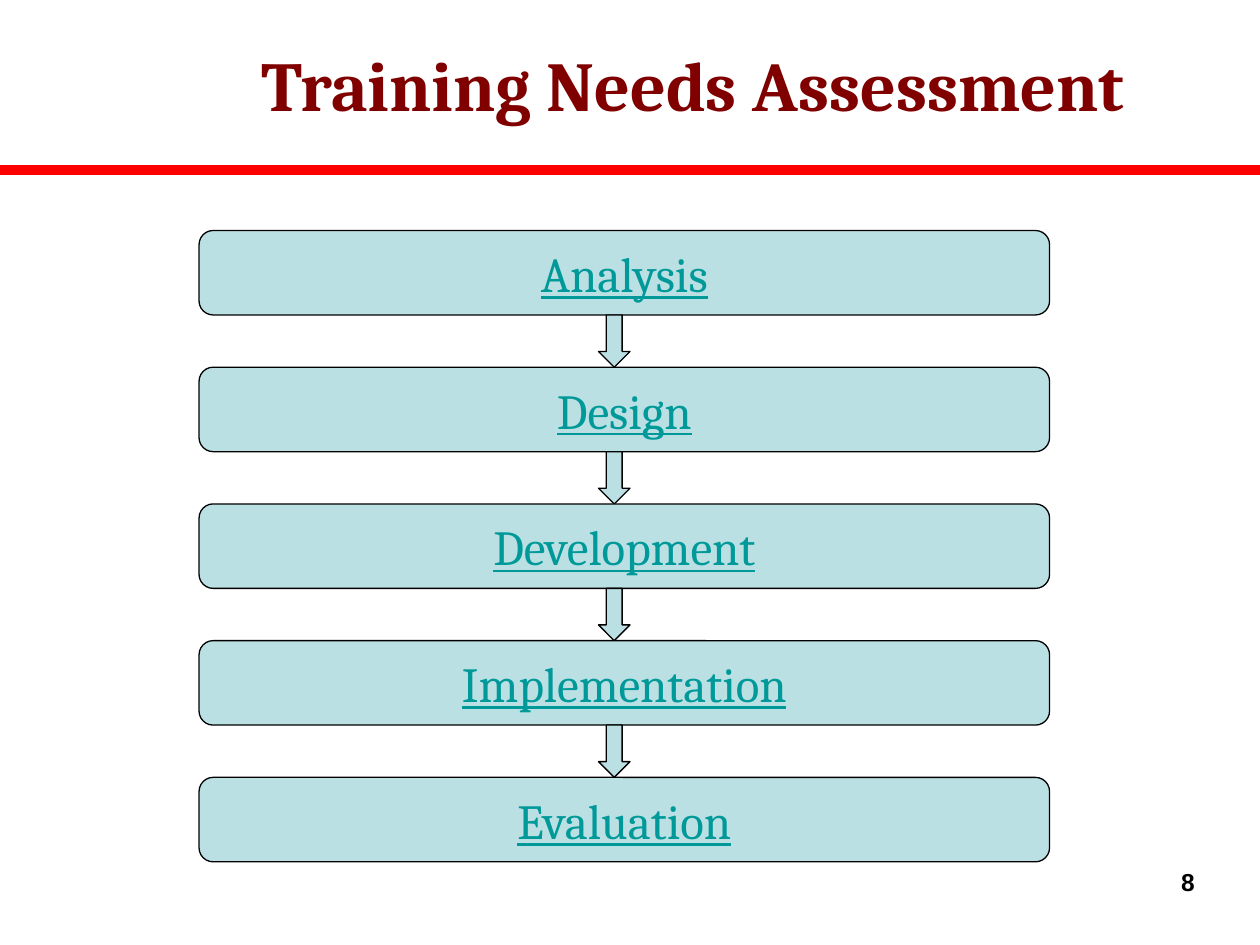
from dataclasses import dataclass

from lxml.etree import SubElement
from pptx import Presentation
from pptx.dml.color import RGBColor as RGB
from pptx.enum.shapes import MSO_CONNECTOR as Connector, MSO_SHAPE as Shape
from pptx.enum.text import MSO_ANCHOR as Anchor, PP_ALIGN as Align
from pptx.oxml.ns import qn
from pptx.util import Inches, Pt

# Content
TITLE = "Training Needs Assessment"
STAGES = ["Analysis", "Design", "Development", "Implementation", "Evaluation"]
PAGE_NUMBER = "8"


@dataclass(frozen=True)
class Theme:
    heading_font: str = "Cambria"
    number_font: str = "Arial"
    title_size: int = 40
    stage_size: int = 28
    number_size: int = 14
    title: RGB = RGB(0x80, 0x00, 0x00)
    rule: RGB = RGB(0xFF, 0x00, 0x00)
    fill: RGB = RGB(0xBB, 0xE0, 0xE3)
    stage: RGB = RGB(0x00, 0x99, 0x99)
    ink: RGB = RGB(0x00, 0x00, 0x00)


THEME = Theme()

# Layout, in inches
SLIDE_W, SLIDE_H = 10, 7.5
RULE_Y = 1.35
STAGE_LEFT, STAGE_W, STAGE_H = 1.58, 6.75, 0.67
FIRST_TOP, LAST_TOP = 1.83, 6.17
PITCH = (LAST_TOP - FIRST_TOP) / (len(STAGES) - 1)
ARROW_LEFT, ARROW_W = 4.75, 0.25


def write(shape, text, align, anchor, font_name, size, color, **style):
    frame = shape.text_frame
    frame.word_wrap = True
    frame.vertical_anchor = anchor
    paragraph = frame.paragraphs[0]
    paragraph.text = text
    paragraph.alignment = align
    font = paragraph.font
    font.name, font.size, font.color.rgb = font_name, Pt(size), color
    for name, value in style.items():
        setattr(font, name, value)


def add_text_box(slide, box, *text_style, **style):
    write(slide.shapes.add_textbox(*map(Inches, box)), *text_style, **style)


def add_flow_shape(slide, kind, left, top, width, height):
    shape = slide.shapes.add_shape(kind, *map(Inches, (left, top, width, height)))
    shape.shadow.inherit = False
    shape.fill.solid()
    shape.fill.fore_color.rgb = THEME.fill
    shape.line.color.rgb = THEME.ink
    shape.line.width = Pt(0.75)
    return shape


def main():
    deck = Presentation()
    deck.slide_width, deck.slide_height = Inches(SLIDE_W), Inches(SLIDE_H)
    slide = deck.slides.add_slide(deck.slide_layouts[6])

    # Rule below the title
    rule = slide.shapes.add_connector(
        Connector.STRAIGHT, 0, Inches(RULE_Y), Inches(SLIDE_W), Inches(RULE_Y))
    rule.line.color.rgb = THEME.rule
    rule.line.width = Pt(6)
    SubElement(rule._element.spPr, qn("a:effectLst"))

    # Title
    add_text_box(slide, (1, 0.33, 9, 0.67), TITLE, Align.CENTER, Anchor.MIDDLE,
                 THEME.heading_font, THEME.title_size, THEME.title, bold=True)

    # Stages, with an arrow from each to the next
    for index, stage in enumerate(STAGES):
        top = FIRST_TOP + index * PITCH
        box = add_flow_shape(slide, Shape.ROUNDED_RECTANGLE,
                             STAGE_LEFT, top, STAGE_W, STAGE_H)
        write(box, stage, Align.CENTER, Anchor.MIDDLE, THEME.heading_font,
              THEME.stage_size, THEME.stage, underline=True)
        if index < len(STAGES) - 1:
            add_flow_shape(slide, Shape.DOWN_ARROW, ARROW_LEFT, top + STAGE_H,
                           ARROW_W, PITCH - STAGE_H)

    # Page number
    add_text_box(slide, (7.25, 6.83, 2.33, 0.52), PAGE_NUMBER, Align.RIGHT, Anchor.TOP,
                 THEME.number_font, THEME.number_size, THEME.ink, bold=True)

    deck.save("out.pptx")


if __name__ == "__main__":
    main()
